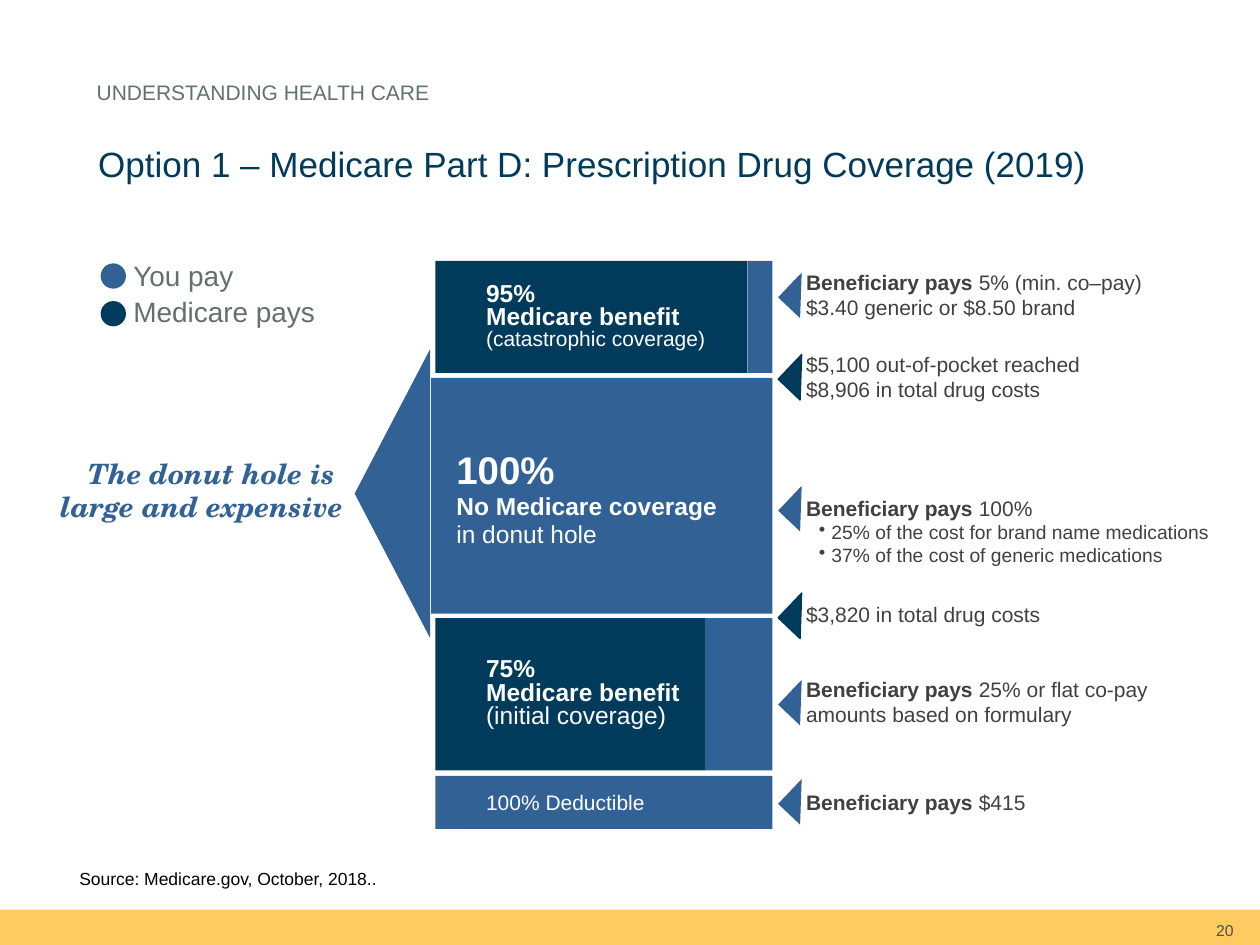
from lxml.etree import SubElement
from pptx import Presentation
from pptx.dml.color import RGBColor
from pptx.enum.shapes import MSO_SHAPE as Shape
from pptx.enum.text import MSO_ANCHOR as Anchor, PP_ALIGN as Align
from pptx.oxml.ns import qn
from pptx.util import Cm, Pt

BLUE, NAVY, GRAY, DARK, WHITE = "326295", "003B5C", "62706F", "404040", "FFFFFF"
GOLD, OUTLINE, NUMBER = "FDBA2E", "00355E", "4D4F53"
SANS, SERIF = "Arial", "TeX Gyre Schola"

# Content: a paragraph is a list of (text, bold) spans
KICKER = "UNDERSTANDING HEALTH CARE"
TITLE = "Option 1 – Medicare Part D: Prescription Drug Coverage (2019)"
SOURCE = "Source: Medicare.gov, October, 2018.."
CALLOUT = "The donut hole is \vlarge and expensive"
PAGE_NUMBER = "20"
LEGEND = [("You pay", BLUE, 5.31, 5.08), ("Medicare pays", NAVY, 6.07, 5.82)]

# Stages: left, top, height, width Medicare pays, text inset, (text, size, bold, line spacing)
STAGES = [
    (8.78, 5.26, 2.26, 6.29, 1.02, [("95%", 14, True, 0.8), ("Medicare benefit", 14, True, 0.8),
                                    ("(catastrophic coverage)", 12, False, 0.8)]),
    (8.69, 7.62, 4.75, 0, 0.51, [("100%", 22, True, Pt(28)),
                                 ("No Medicare coverage", 14, True, Pt(16)),
                                 ("in donut hole", 14, False, Pt(16))]),
    (8.78, 12.46, 3.07, 5.43, 1.02, [("75%", 14, True, 0.8), ("Medicare benefit", 14, True, 0.8),
                                     ("(initial coverage)", 14, False, 0.8)]),
    (8.78, 15.64, 1.07, 0, 1.02, [("100% Deductible", 12, False, 1.0)]),
]
STAGE_RIGHT = 15.57

# Notes: text top, arrow top, is a threshold, height, paragraphs, bullets
PAYS = ("Beneficiary pays ", True)
NOTES = [
    (5.31, 5.61, False, 1.27, [[PAYS, ("5% (min. co–pay)", False)],
                               [("$3.40 generic or $8.50 brand", False)]], []),
    (6.96, 7.26, True, 1.27, [[("$5,100 out-of-pocket reached", False)],
                              [("$8,906 in total drug costs", False)]], []),
    (9.86, 9.91, False, 1.7, [[PAYS, ("100%", False)]],
     ["25% of the cost for brand name medications", "37% of the cost of generic medications"]),
    (12.01, 12.07, True, 0.76, [[("$3,820 in total drug costs", False)]], []),
    (13.51, 13.82, False, 1.27,
     [[PAYS, ("25% or flat co-pay amounts based on formulary", False)]], []),
    (15.8, 15.82, False, 0.76, [[PAYS, ("$415", False)]], []),
]

deck = Presentation()
deck.slide_width, deck.slide_height = Cm(25.4), Cm(19.05)
page = deck.slides.add_slide(deck.slide_layouts[6])


def color(value):
    return RGBColor.from_string(value)


def add_shape(kind, left, top, width, height, fill, rotation=0, line=None):
    shape = page.shapes.add_shape(kind, Cm(left), Cm(top), Cm(width), Cm(height))
    shape.shadow.inherit = False
    shape.fill.solid()
    shape.fill.fore_color.rgb = color(fill)
    shape.rotation = rotation
    if line:
        shape.line.color.rgb = color(line)
        shape.line.width = Pt(0.75)
    else:
        shape.line.fill.background()
    return shape


def add_box(left, top, width, height, anchor=Anchor.TOP):
    frame = page.shapes.add_textbox(Cm(left), Cm(top), Cm(width), Cm(height)).text_frame
    frame.word_wrap = True
    frame.vertical_anchor = anchor
    return frame


def next_para(frame):
    first = frame.paragraphs[0]
    return frame.add_paragraph() if first.runs else first


def style(para, size, fill, bold=None, name=SANS):
    font = para.font
    font.name, font.size, font.bold = name, Pt(size), bold
    font.color.rgb = color(fill)


def write(frame, text, size, fill, bold=None, name=SANS, align=Align.LEFT):
    para = next_para(frame)
    para.text = text
    para.alignment = align
    style(para, size, fill, bold, name)
    return para


def add_bullet(para):
    props = para._p.get_or_add_pPr()
    props.set("marL", str(Cm(0.51)))
    props.set("indent", str(-Cm(0.25)))
    SubElement(props, qn("a:buChar")).set("char", "•")


# Footer band and page number
band = add_shape(Shape.RECTANGLE, 0, 18.34, 25.4, 0.71, GOLD)
tint = band.fill._xPr.find(qn("a:solidFill"))[0]
SubElement(tint, qn("a:alpha")).set("val", "75000")
number = add_box(18.95, 18.34, 5.92, 0.71, Anchor.MIDDLE)
number.margin_right = number.margin_bottom = 0
write(number, PAGE_NUMBER, 9, NUMBER, align=Align.RIGHT)

# Headings and source
kicker = add_box(1.7, 0.64, 22, 1.47, Anchor.BOTTOM)
kicker.margin_bottom = 0
write(kicker, KICKER, 12, GRAY)
write(add_box(1.73, 2.74, 22, 1.55), TITLE, 20, NAVY)
write(add_box(1.35, 17.37, 22, 0.69), SOURCE, 10, "000000")

# Legend
for label, fill, dot_top, text_top in LEGEND:
    add_shape(Shape.OVAL, 2.03, dot_top, 0.51, 0.51, fill)
    write(add_box(2.44, text_top, 5, 0.94), label, 16, GRAY)

# Coverage stages, with the donut hole pointing left
add_shape(Shape.ISOSCELES_TRIANGLE, 5, 9.19, 5.82, 1.52, BLUE, 270)
for left, top, height, covered, inset, lines in STAGES:
    width = covered or STAGE_RIGHT - left
    block = add_shape(Shape.RECTANGLE, left, top, width, height, NAVY if covered else BLUE)
    frame = block.text_frame
    frame.word_wrap = True
    frame.vertical_anchor = Anchor.MIDDLE
    frame.margin_left = Cm(inset)
    for text, size, bold, spacing in lines:
        write(frame, text, size, WHITE, bold).line_spacing = spacing
    if covered:
        share_left = left + covered
        add_shape(Shape.RECTANGLE, share_left, top, STAGE_RIGHT - share_left, height, BLUE)

# Notes with their arrows
for text_top, arrow_top, threshold, height, paragraphs, bullets in NOTES:
    add_shape(Shape.RIGHT_TRIANGLE, 15.84, arrow_top, 0.61, 0.69,
              NAVY if threshold else BLUE, 43.5, OUTLINE if threshold else None)
    frame = add_box(16, text_top, 9.27 if bullets else 8.6, height)
    for spans in paragraphs:
        para = next_para(frame)
        for text, bold in spans:
            span = para.add_run()
            span.text, span.font.bold = text, bold
        style(para, 12, DARK)
    for text in bullets:
        para = next_para(frame)
        add_bullet(para)
        para.text = text
        style(para, 11, DARK)

# Callout beside the donut hole
callout = write(add_box(0.5, 9.07, 6.66, 1.63), CALLOUT, 16, BLUE, True, SERIF, Align.RIGHT)
callout.font.italic = True

deck.save("out.pptx")
